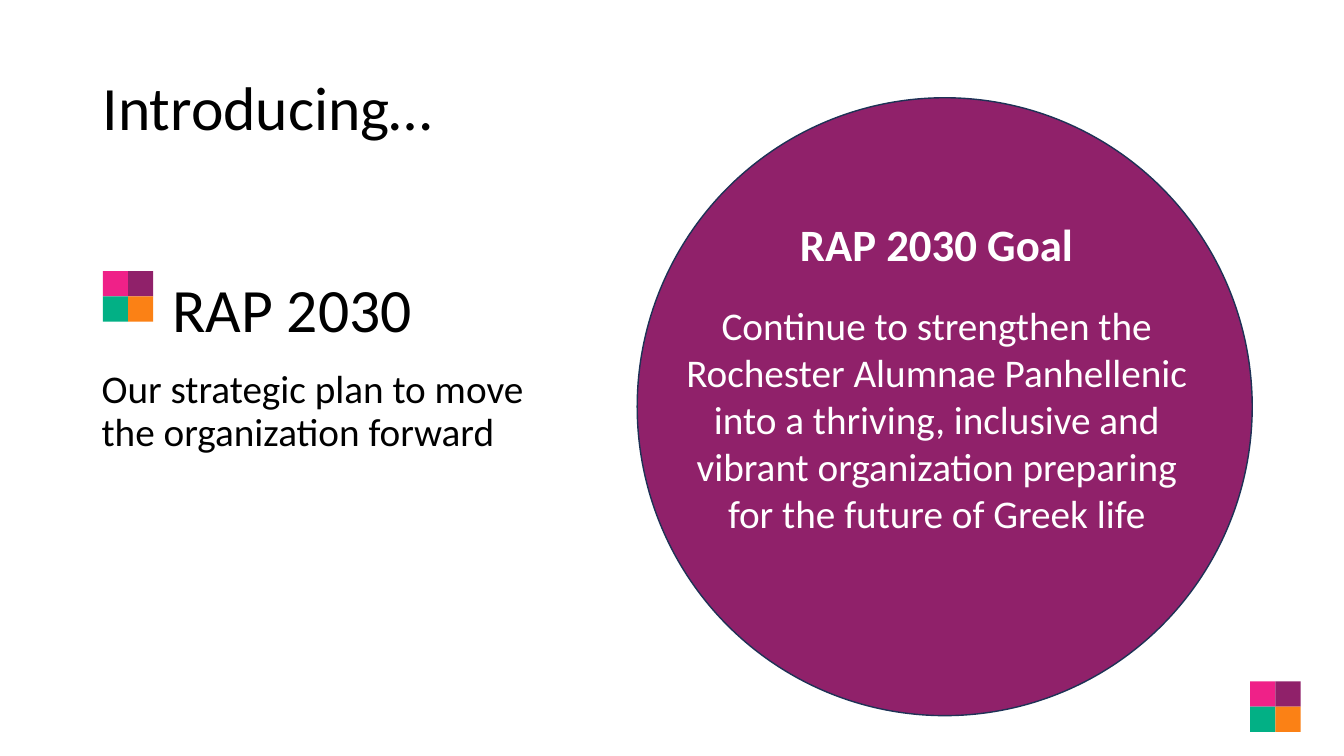
from pptx import Presentation
from pptx.dml.color import RGBColor
from pptx.enum.shapes import MSO_SHAPE as SHAPE
from pptx.enum.text import MSO_ANCHOR as ANCHOR, PP_ALIGN as ALIGN
from pptx.util import Inches, Pt

BLACK = RGBColor(0x00, 0x00, 0x00)
WHITE = RGBColor(0xFF, 0xFF, 0xFF)
NAVY = RGBColor(0x1E, 0x32, 0x56)
PINK = RGBColor(0xEF, 0x21, 0x88)
PLUM = RGBColor(0x90, 0x21, 0x6A)
GREEN = RGBColor(0x02, 0xB0, 0x85)
ORANGE = RGBColor(0xFB, 0x81, 0x15)

FONT = "Calibri"
CIRCLE = (6.32, 0.97, 6.1, 6.13)
TILE = 0.25
TILE_COLORS = [PINK, PLUM, GREEN, ORANGE]
TILE_ORIGINS = [(12.4, 6.76), (1.02, 2.69)]

# Each paragraph: text, size, bold, space before in points
LEFT_TEXTS = [
    ((0.92, 0.76, 5.26, 0.67), ANCHOR.MIDDLE, [("Introducing…", 44, False, 0)]),
    ((1.61, 2.77, 4.57, 0.67), ANCHOR.MIDDLE, [("RAP 2030", 44, False, 0)]),
    ((0.91, 3.62, 4.63, 1.58), ANCHOR.TOP,
     [("Our strategic plan to move the organization forward", 28, False, 0)]),
]
GOAL_BOX = (6.67, 2.1, 5.24, 3.3)
GOAL = [
    ("RAP 2030 Goal", 32, True, 0),
    ("Continue to strengthen the Rochester Alumnae Panhellenic into a thriving, "
     "inclusive and vibrant organization preparing for the future of Greek life",
     28, False, 22),
]


def add_shape(s, kind, box, fill, line=None):
    sp = s.shapes.add_shape(kind, *map(Inches, box))
    sp.shadow.inherit = False
    sp.fill.solid()
    sp.fill.fore_color.rgb = fill
    if line is None:
        sp.line.fill.background()
    else:
        sp.line.color.rgb = line
        sp.line.width = Pt(1)


def add_text(s, box, paragraphs, color, anchor=ANCHOR.TOP, align=ALIGN.LEFT, spacing=0.9):
    tf = s.shapes.add_textbox(*map(Inches, box)).text_frame
    tf.word_wrap = True
    tf.vertical_anchor = anchor
    for i, (text, size, bold, before) in enumerate(paragraphs):
        p = tf.add_paragraph() if i else tf.paragraphs[0]
        p.alignment = align
        p.line_spacing = spacing
        p.space_before = Pt(before)
        r = p.add_run()
        r.text = text
        r.font.name = FONT
        r.font.size = Pt(size)
        r.font.bold = bold
        r.font.color.rgb = color


def add_tiles(s, left, top):
    """Draw a two by two block of coloured squares."""
    for i, color in enumerate(TILE_COLORS):
        row, col = divmod(i, 2)
        box = (left + col * TILE, top + row * TILE, TILE, TILE)
        add_shape(s, SHAPE.RECTANGLE, box, color)


def main():
    prs = Presentation()
    prs.slide_width, prs.slide_height = Inches(13.33), Inches(7.5)
    s = prs.slides.add_slide(prs.slide_layouts[6])

    add_shape(s, SHAPE.OVAL, CIRCLE, PLUM, NAVY)
    for box, anchor, paragraphs in LEFT_TEXTS:
        add_text(s, box, paragraphs, BLACK, anchor)
    add_text(s, GOAL_BOX, GOAL, WHITE, align=ALIGN.CENTER, spacing=1.0)
    for left, top in TILE_ORIGINS:
        add_tiles(s, left, top)

    prs.save("out.pptx")


if __name__ == "__main__":
    main()
